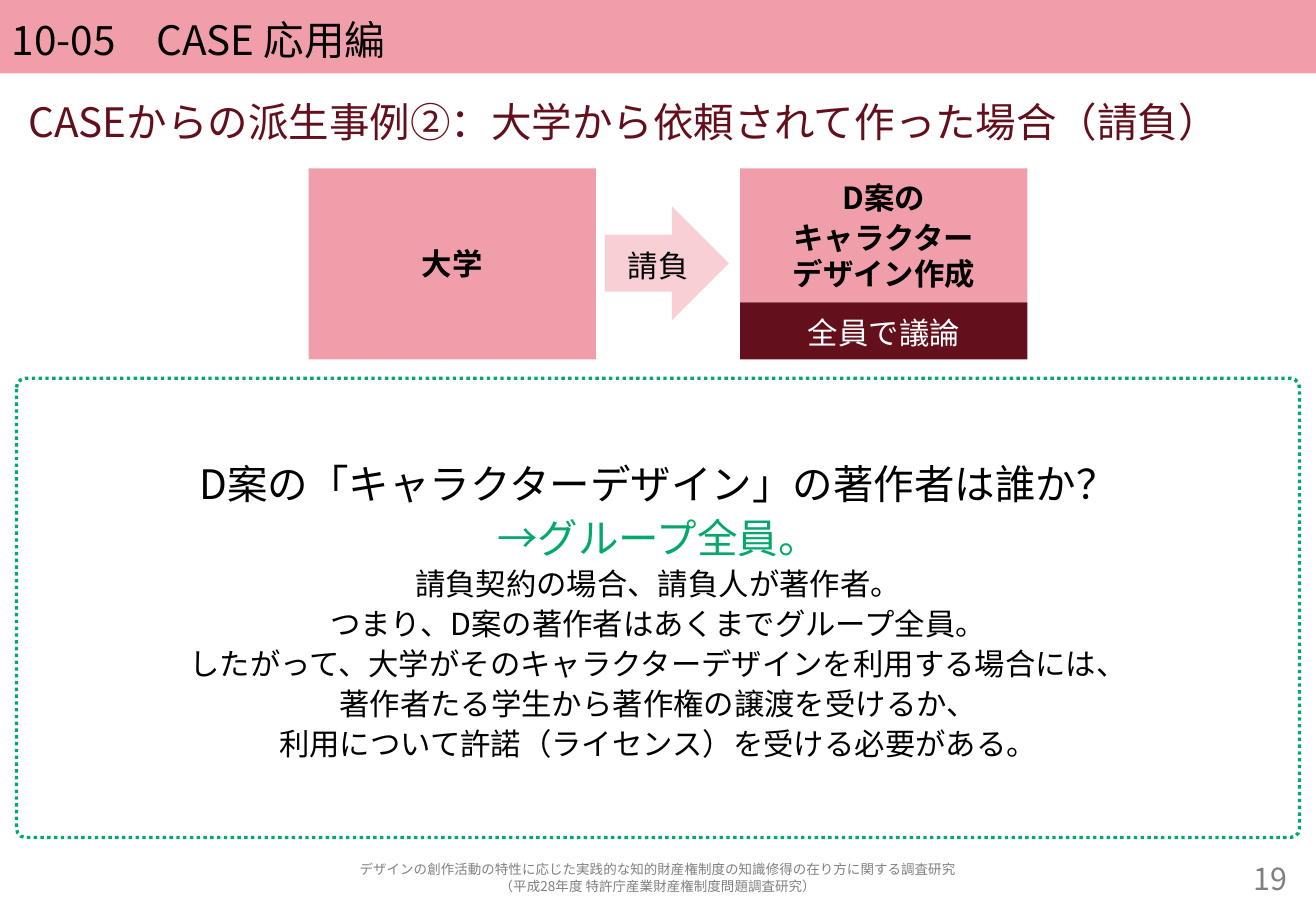
from dataclasses import dataclass

import pptx
import pptx.dml.color
import pptx.enum.dml
import pptx.enum.shapes
import pptx.enum.text
import pptx.oxml
import pptx.oxml.ns
import pptx.util

PX = 9525
FONT = "Noto Sans CJK JP"
COLORS = {
    "pink": "F09FAA",
    "pale": "F8CFD5",
    "wine": "64101C",
    "green": "04A86A",
    "gray": "808080",
    "black": "000000",
    "white": "FFFFFF",
}
SHAPE = pptx.enum.shapes.MSO_SHAPE
ALIGN = pptx.enum.text.PP_ALIGN
ANCHOR = pptx.enum.text.MSO_ANCHOR

MARGIN, CONTENT_W = 13, 1014
FLOW_TOP, FLOW_H, FLOW_W = 133, 151, 227
CLIENT_X, WORK_X = 244, 585
DESIGN_H = 106
FOOTER_TOP, FOOTER_H = 678, 30


@dataclass
class Line:
    text: str
    size: int = 18
    color: str = "black"
    bold: bool = False
    spacing: float = 1.1


@dataclass
class Box:
    x: int
    y: int
    w: int
    h: int
    lines: list[Line]
    align: ALIGN = ALIGN.CENTER
    shape: SHAPE | None = None
    fill: str | None = None
    border: str | None = None
    radius: float | None = None
    anchor: ANCHOR = ANCHOR.MIDDLE
    inset_y: int = 5


BOXES = [
    Box(0, 0, 1040, 58, [Line("10-05\u3000CASE 応用編".replace("\u3000", "　"), 24)],
        ALIGN.LEFT, SHAPE.RECTANGLE, "pink"),
    Box(MARGIN, 73, CONTENT_W, 45,
        [Line("CASEからの派生事例②：大学から依頼されて作った場合（請負）", 24, "wine")],
        ALIGN.LEFT, anchor=ANCHOR.TOP, inset_y=0),
    Box(898, FOOTER_TOP, 129, FOOTER_H, [Line("19", color="gray")], ALIGN.RIGHT),
    Box(CLIENT_X, FLOW_TOP, FLOW_W, FLOW_H, [Line("大学", bold=True, spacing=1.0)],
        shape=SHAPE.RECTANGLE, fill="pink"),
    Box(WORK_X, FLOW_TOP, FLOW_W, DESIGN_H,
        [Line("D案の", bold=True, spacing=1.0),
         Line("キャラクター", bold=True),
         Line("デザイン作成", bold=True, spacing=1.0)],
        shape=SHAPE.RECTANGLE, fill="pink"),
    Box(478, 163, 98, 90, [Line("請負")], ALIGN.RIGHT, SHAPE.RIGHT_ARROW, "pale"),
    Box(WORK_X, FLOW_TOP + DESIGN_H, FLOW_W, FLOW_H - DESIGN_H,
        [Line("全員で議論", color="white")], shape=SHAPE.RECTANGLE, fill="wine"),
    Box(MARGIN, 299, CONTENT_W, 363,
        [Line("D案の「キャラクターデザイン」の著作者は誰か？", 24),
         Line("→グループ全員。", 24, "green"),
         Line("請負契約の場合、請負人が著作者。"),
         Line("つまり、D案の著作者はあくまでグループ全員。"),
         Line("したがって、大学がそのキャラクターデザインを利用する場合には、"),
         Line("著作者たる学生から著作権の譲渡を受けるか、"),
         Line("利用について許諾（ライセンス）を受ける必要がある。")],
        shape=SHAPE.ROUNDED_RECTANGLE, border="green", radius=0.02),
    Box(MARGIN, FOOTER_TOP, CONTENT_W, FOOTER_H,
        [Line("デザインの創作活動の特性に応じた実践的な知的財産権制度の知識修得の在り方に関する調査研究", 8, "gray"),
         Line("（平成28年度 特許庁産業財産権制度問題調査研究）", 8, "gray")]),
]


def rgb(name: str) -> pptx.dml.color.RGBColor:
    return pptx.dml.color.RGBColor.from_string(COLORS[name])


def write_text(tf: pptx.text.text.TextFrame, box: Box) -> None:
    tf.word_wrap = True
    tf.vertical_anchor = box.anchor
    tf.margin_top = tf.margin_bottom = box.inset_y * PX
    for i, line in enumerate(box.lines):
        p = tf.add_paragraph() if i else tf.paragraphs[0]
        p.alignment = box.align
        p.line_spacing = line.spacing
        p.font.size = pptx.util.Pt(line.size)
        p.font.bold = line.bold
        p.font.color.rgb = rgb(line.color)
        p.font.name = FONT
        props = p._p.pPr.find(pptx.oxml.ns.qn("a:defRPr"))
        props.append(pptx.oxml.parse_xml(
            f'<a:ea {pptx.oxml.ns.nsdecls("a")} typeface="{FONT}"/>'))
        r = p.add_run()
        r.text = line.text


def draw_box(s: pptx.slide.Slide, box: Box) -> None:
    frame = [v * PX for v in (box.x, box.y, box.w, box.h)]
    if box.shape is None:
        sp = s.shapes.add_textbox(*frame)
    else:
        sp = s.shapes.add_shape(box.shape, *frame)
        sp.shadow.inherit = False
        if box.fill:
            sp.fill.solid()
            sp.fill.fore_color.rgb = rgb(box.fill)
        else:
            sp.fill.background()
        if box.border:
            sp.line.color.rgb = rgb(box.border)
            sp.line.width = pptx.util.Pt(2)
            sp.line.dash_style = pptx.enum.dml.MSO_LINE.ROUND_DOT
        else:
            sp.line.fill.background()
        if box.radius is not None:
            sp.adjustments[0] = box.radius
    write_text(sp.text_frame, box)


def main() -> None:
    prs = pptx.Presentation()
    prs.slide_width = 1040 * PX
    prs.slide_height = 720 * PX
    s = prs.slides.add_slide(prs.slide_layouts[6])
    for box in BOXES:
        draw_box(s, box)
    prs.save("out.pptx")


if __name__ == "__main__":
    main()
